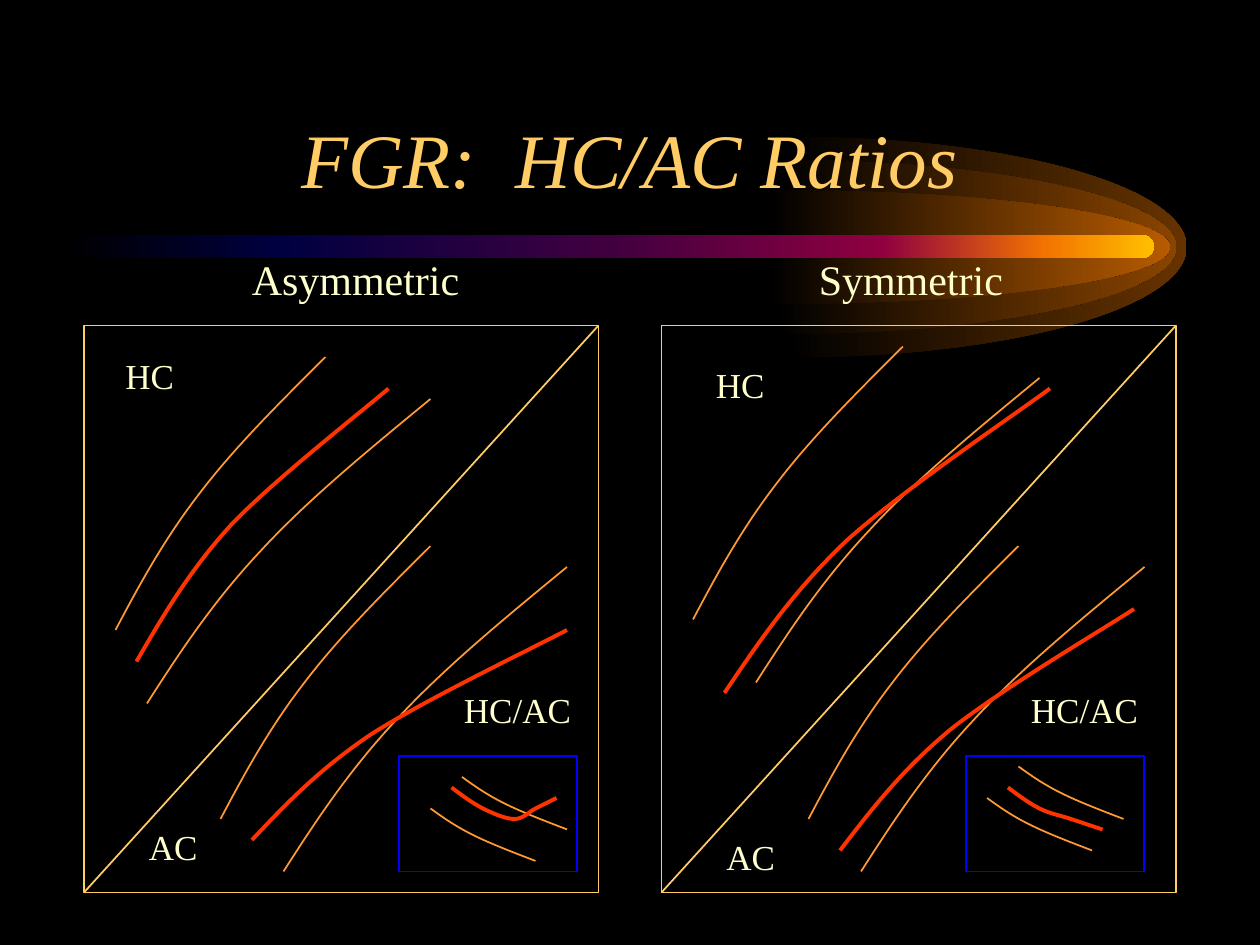
from lxml.etree import SubElement
from pptx import Presentation
from pptx.dml.color import RGBColor
from pptx.enum.shapes import MSO_CONNECTOR, MSO_SHAPE
from pptx.enum.text import MSO_ANCHOR, MSO_AUTO_SIZE, PP_ALIGN
from pptx.oxml.ns import qn
from pptx.util import Pt

# Cubic curves on a unit square: a start point, then three points per segment
NORMAL_LIMIT = [(0, 1), (0.115, 0.833), (0.232, 0.667), (0.4, 0.5),
                (0.565, 0.333), (0.782, 0.167), (1, 0)]
FALLING_LIMIT = [(x, 1 - y) for x, y in NORMAL_LIMIT]
FETAL_GROWTH = [(0, 1), (0.105, 0.833), (0.21, 0.667), (0.375, 0.5),
                (0.545, 0.335), (0.9, 0.08), (1, 0)]

# Ratio curves in points on the slide
ASYMMETRIC_RATIO = [(258, 450), (264, 454.5), (270, 459), (276, 462),
                    (282, 465), (289, 468), (294, 468),
                    (299, 468), (302, 464), (306, 462),
                    (310, 460), (314, 458), (318, 456)]
SYMMETRIC_RATIO = [(576, 450), (582, 454.5), (588, 459), (594, 462),
                   (600, 465), (606, 466), (612, 468),
                   (618, 470), (624, 472), (630, 474)]

# Share of the radius that makes a cubic curve follow a quarter ellipse
ARC = 0.55


def color(value):
    return RGBColor.from_string(value)


def write_text(frame, text, size=20, hex_color="FFFFCC", italic=False,
               align=PP_ALIGN.LEFT, anchor=MSO_ANCHOR.TOP, wrap=False, tab=None):
    frame.word_wrap = wrap
    frame.vertical_anchor = anchor
    paragraph = frame.paragraphs[0]
    paragraph.alignment = align
    if tab:
        tab_list = SubElement(paragraph._p.get_or_add_pPr(), qn("a:tabLst"))
        SubElement(tab_list, qn("a:tab"), pos=str(Pt(tab)), algn="l")
    run = paragraph.add_run()
    run.text = text
    run.font.name = "Times New Roman"
    run.font.size = Pt(size)
    run.font.italic = italic
    run.font.color.rgb = color(hex_color)


class SlideBuilder:
    GOLD, ORANGE, RED, BLUE = "FFCC66", "FF9933", "FF3300", "0000FF"

    def __init__(self, slide):
        self.shapes = slide.shapes
        slide.background.fill.solid()
        slide.background.fill.fore_color.rgb = color("000000")

    def outline(self, shape, hex_color, width=1):
        shape.shadow.inherit = False
        shape.fill.background()
        shape.line.color.rgb = color(hex_color)
        shape.line.width = Pt(width)

    def gradient(self, shape, stops):
        shape.shadow.inherit = False
        shape.line.fill.background()
        shape.fill.gradient()
        shape.fill.gradient_angle = 0
        stop_list = shape.element.spPr.find(qn("a:gradFill")).find(qn("a:gsLst"))
        for stop in list(stop_list):
            stop_list.remove(stop)
        for position, value in stops:
            stop = SubElement(stop_list, qn("a:gs"), pos=str(position * 1000))
            SubElement(stop, qn("a:srgbClr"), val=value)

    def freeform(self, controls, closing_point=None):
        points = controls + ([closing_point] if closing_point else [])
        corners = [(Pt(x), Pt(y)) for x, y in points]
        builder = self.shapes.build_freeform(*corners[0])
        builder.add_line_segments(corners[1:], close=bool(closing_point))
        shape = builder.convert_to_shape()
        # Turn each three line segments into one cubic curve
        segments = list(shape.element.iter(qn("a:lnTo")))[:len(controls) - 1]
        for first in range(0, len(segments), 3):
            segment = segments[first]
            cubic = segment.makeelement(qn("a:cubicBezTo"))
            segment.addprevious(cubic)
            for part in segments[first:first + 3]:
                cubic.append(part[0])
                part.getparent().remove(part)
        return shape

    def curve(self, controls, hex_color, width=1, box=(0, 0, 1, 1)):
        left, top, box_width, box_height = box
        points = [(left + x * box_width, top + y * box_height) for x, y in controls]
        self.outline(self.freeform(points), hex_color, width)

    def glow(self, x, radius_y, hex_color, y=141.2, radius_x=225.2):
        right, top, bottom = x + radius_x, y - radius_y, y + radius_y
        arc_x, arc_y = ARC * radius_x, ARC * radius_y
        controls = [(x, top), (x + arc_x, top), (right, y - arc_y), (right, y),
                    (right, y + arc_y), (x + arc_x, bottom), (x, bottom),
                    (x - 1.2, bottom), (x - 2.4, bottom), (x - 3.6, bottom)]
        self.gradient(self.freeform(controls, closing_point=(x, y)),
                      [(0, "000000"), (100, hex_color)])

    def bar(self, left, top, width, height, stops):
        shape = self.shapes.add_shape(MSO_SHAPE.ROUNDED_RECTANGLE,
                                      Pt(left), Pt(top), Pt(width), Pt(height))
        shape.adjustments[0] = 0.5
        self.gradient(shape, stops)

    def rectangle(self, left, top, width, height, hex_color):
        shape = self.shapes.add_shape(MSO_SHAPE.RECTANGLE,
                                      Pt(left), Pt(top), Pt(width), Pt(height))
        self.outline(shape, hex_color)

    def line(self, x1, y1, x2, y2, hex_color):
        connector = self.shapes.add_connector(MSO_CONNECTOR.STRAIGHT,
                                              Pt(x1), Pt(y1), Pt(x2), Pt(y2))
        connector.line.color.rgb = color(hex_color)
        connector.line.width = Pt(1)
        SubElement(connector.element.spPr, qn("a:effectLst"))

    def label(self, text, left, top, width, height=31, **text_format):
        box = self.shapes.add_textbox(Pt(left), Pt(top), Pt(width), Pt(height))
        write_text(box.text_frame, text, **text_format)
        box.text_frame.auto_size = MSO_AUTO_SIZE.SHAPE_TO_FIT_TEXT

    def title(self, text, left, top, width, height):
        shape = self.shapes.title
        shape.left, shape.top, shape.width, shape.height = map(Pt, (left, top, width, height))
        write_text(shape.text_frame, text, size=44, hex_color=self.GOLD, italic=True,
                   align=PP_ALIGN.CENTER, anchor=MSO_ANCHOR.BOTTOM, wrap=True)
        # Bring the title in front of the comet
        shape.element.getparent().append(shape.element)


def main():
    presentation = Presentation()
    presentation.slide_width, presentation.slide_height = Pt(720), Pt(540)
    builder = SlideBuilder(presentation.slides.add_slide(presentation.slide_layouts[5]))

    # Comet: three glows and the tail
    for x, radius_y, hex_color in [(452.9, 63, "663300"), (447.1, 49.8, "894400"),
                                   (443.5, 32.6, "B75B00")]:
        builder.glow(x, radius_y, hex_color)
    builder.bar(36, 134.4, 623.5, 13,
                [(0, "000000"), (20, "000040"), (50, "400040"),
                 (75, "8F0040"), (90, "F27300"), (100, "FFBF00")])
    builder.title("FGR:  HC/AC Ratios", 54, 30, 612, 90)

    # Panels with diagonals
    for left in (48, 378):
        builder.rectangle(left, 186, 294, 324, builder.GOLD)
        builder.line(left, 510, left + 294, 186, builder.GOLD)

    # Normal limits on the panels, by common size
    growth_limits = [
        ((120, 156), [(66, 204), (126, 312), (396, 198), (462, 312)]),
        ((162, 174), [(84, 228), (162, 324), (432, 216), (492, 324)]),
    ]
    for size, corners in growth_limits:
        for corner in corners:
            builder.curve(NORMAL_LIMIT, builder.ORANGE, box=corner + size)

    # Headings and labels
    builder.label("Asymmetric\tSymmetric", 136.8, 141.4, 443.5, 36, size=24, tab=324)
    for text, left, top, width in [("HC", 64.6, 199, 42.5), ("HC", 402, 204, 42.5),
                                   ("AC", 78, 468, 42.5), ("AC", 408, 474, 42.5),
                                   ("HC/AC", 258, 390, 75.6), ("HC/AC", 582, 390, 75.6)]:
        builder.label(text, left, top, width)

    # Ratio insets with their normal limits
    for left in (228, 552):
        builder.rectangle(left, 432, 102, 66, builder.BLUE)
    for corner in [(264, 444), (246, 462), (582, 438), (564, 456)]:
        builder.curve(FALLING_LIMIT, builder.ORANGE, box=corner + (60, 30))

    # Growth-restricted curves
    for box in [(78, 222, 144, 156), (414, 222, 186, 174),
                (144, 360, 180, 120), (480, 348, 168, 138)]:
        builder.curve(FETAL_GROWTH, builder.RED, 2.25, box)
    for controls in (ASYMMETRIC_RATIO, SYMMETRIC_RATIO):
        builder.curve(controls, builder.RED, 2.25)

    presentation.save("out.pptx")


if __name__ == "__main__":
    main()
